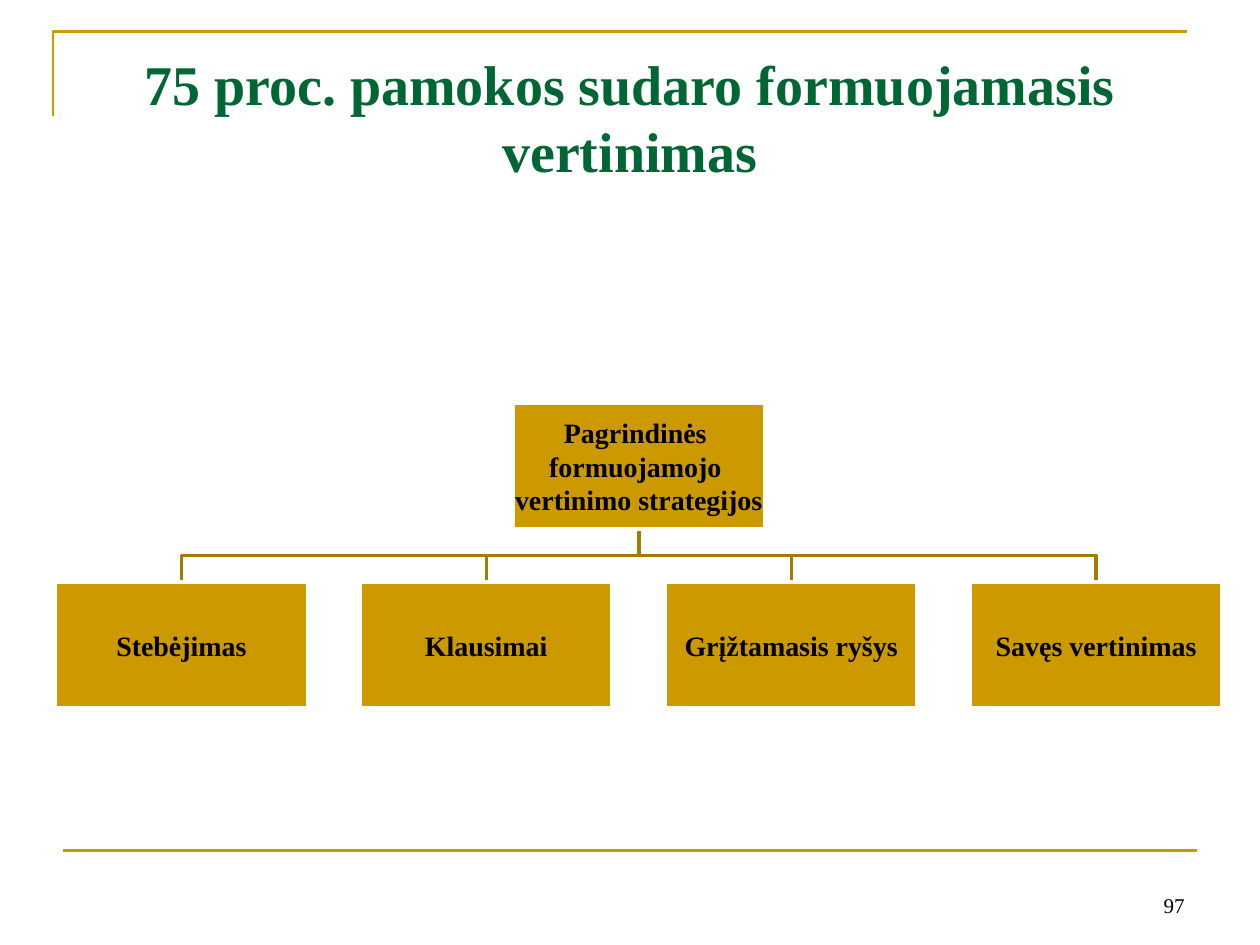
"""Build a slide with a title and a one-level chart of assessment strategies."""
from pptx import Presentation
from pptx.dml.color import RGBColor
from pptx.enum.shapes import MSO_CONNECTOR, MSO_SHAPE
from pptx.enum.text import MSO_ANCHOR, PP_ALIGN
from pptx.oxml.ns import qn
from pptx.util import Inches, Pt
from lxml import etree

RECTANGLE = MSO_SHAPE.RECTANGLE
STRAIGHT = MSO_CONNECTOR.STRAIGHT
MIDDLE, BOTTOM = MSO_ANCHOR.MIDDLE, MSO_ANCHOR.BOTTOM
CENTER, RIGHT = PP_ALIGN.CENTER, PP_ALIGN.RIGHT

FONT = "Times New Roman"
COLORS = {"gold": "CC9900", "branch": "A37B00", "title": "006633",
          "text": "000000", "border": "FFFFFF"}

TITLE = "75 proc. pamokos sudaro formuojamasis vertinimas"
PAGE_NUMBER = "97"
ROOT = ["Pagrindinės ", "formuojamojo ", "vertinimo strategijos"]
STRATEGIES = ["Stebėjimas", "Klausimai", "Grįžtamasis ryšys", "Savęs vertinimas"]

CHART_CENTER = 5.07
BOX_WIDTH, BOX_HEIGHT = 2, 1
BOX_STEP = 2.42
ROOT_TOP, STRATEGY_TOP = 3.2, 4.62


def color(name):
    return RGBColor.from_string(COLORS[name])


def set_line(shape, name, width):
    shape.line.color.rgb = color(name)
    shape.line.width = Pt(width)


def write_text(shape, lines, size, name="text", bold=False, align=CENTER,
               anchor=MIDDLE, wrap=True, margin=None):
    frame = shape.text_frame
    frame.word_wrap = wrap
    frame.vertical_anchor = anchor
    if margin is not None:
        frame.margin_left = frame.margin_right = Inches(margin)
        frame.margin_top = frame.margin_bottom = Inches(margin)
    for index, line in enumerate(lines):
        paragraph = frame.add_paragraph() if index else frame.paragraphs[0]
        paragraph.alignment = align
        run = paragraph.add_run()
        run.text = line
        run.font.name = FONT
        run.font.size = Pt(size)
        run.font.bold = bold
        run.font.color.rgb = color(name)


def add_text(slide, lines, left, top, width, height, **text_format):
    box = slide.shapes.add_textbox(*map(Inches, (left, top, width, height)))
    write_text(box, lines, **text_format)


def add_path(slide, points, name, width):
    points = [(Inches(x), Inches(y)) for x, y in points]
    builder = slide.shapes.build_freeform(*points[0], scale=1.0)
    builder.add_line_segments(points[1:], close=False)
    shape = builder.convert_to_shape()
    shape.shadow.inherit = False
    shape.fill.background()
    set_line(shape, name, width)


def add_rule(slide, left, right, y):
    rule = slide.shapes.add_connector(
        STRAIGHT, Inches(left), Inches(y), Inches(right), Inches(y))
    set_line(rule, "gold", 1.5)
    etree.SubElement(rule._element.spPr, qn("a:effectLst"))


def add_box(slide, lines, center, top):
    box = slide.shapes.add_shape(
        RECTANGLE, Inches(center - BOX_WIDTH / 2), Inches(top),
        Inches(BOX_WIDTH), Inches(BOX_HEIGHT))
    box.shadow.inherit = False
    box.fill.solid()
    box.fill.fore_color.rgb = color("gold")
    set_line(box, "border", 2)
    write_text(box, lines, size=16, bold=True, wrap=False, margin=0.01)


def add_chart_tree(slide):
    root_bottom = ROOT_TOP + BOX_HEIGHT
    branch_y = (root_bottom + STRATEGY_TOP) / 2
    middle = (len(STRATEGIES) - 1) / 2
    centers = [CHART_CENTER + (index - middle) * BOX_STEP
               for index in range(len(STRATEGIES))]
    for center in centers:
        add_path(slide, [(CHART_CENTER, root_bottom), (CHART_CENTER, branch_y),
                         (center, branch_y), (center, STRATEGY_TOP)], "branch", 2)
    add_box(slide, ROOT, CHART_CENTER, ROOT_TOP)
    for strategy, center in zip(STRATEGIES, centers):
        add_box(slide, [strategy], center, STRATEGY_TOP)


def main():
    presentation = Presentation()
    presentation.slide_width = Inches(10)
    presentation.slide_height = Inches(7.5)
    slide = presentation.slides.add_slide(presentation.slide_layouts[6])
    add_path(slide, [(0.42, 0.92), (0.42, 0.25), (9.42, 0.25)], "gold", 1.5)
    add_rule(slide, 0.5, 9.5, 6.75)
    add_text(slide, [PAGE_NUMBER], 7.17, 6.83, 2.33, 0.5,
             size=12, align=RIGHT, anchor=BOTTOM)
    add_text(slide, [TITLE], 0.5, 0.3, 9, 1.25, size=32, name="title", bold=True)
    add_chart_tree(slide)
    presentation.save("out.pptx")


if __name__ == "__main__":
    main()
